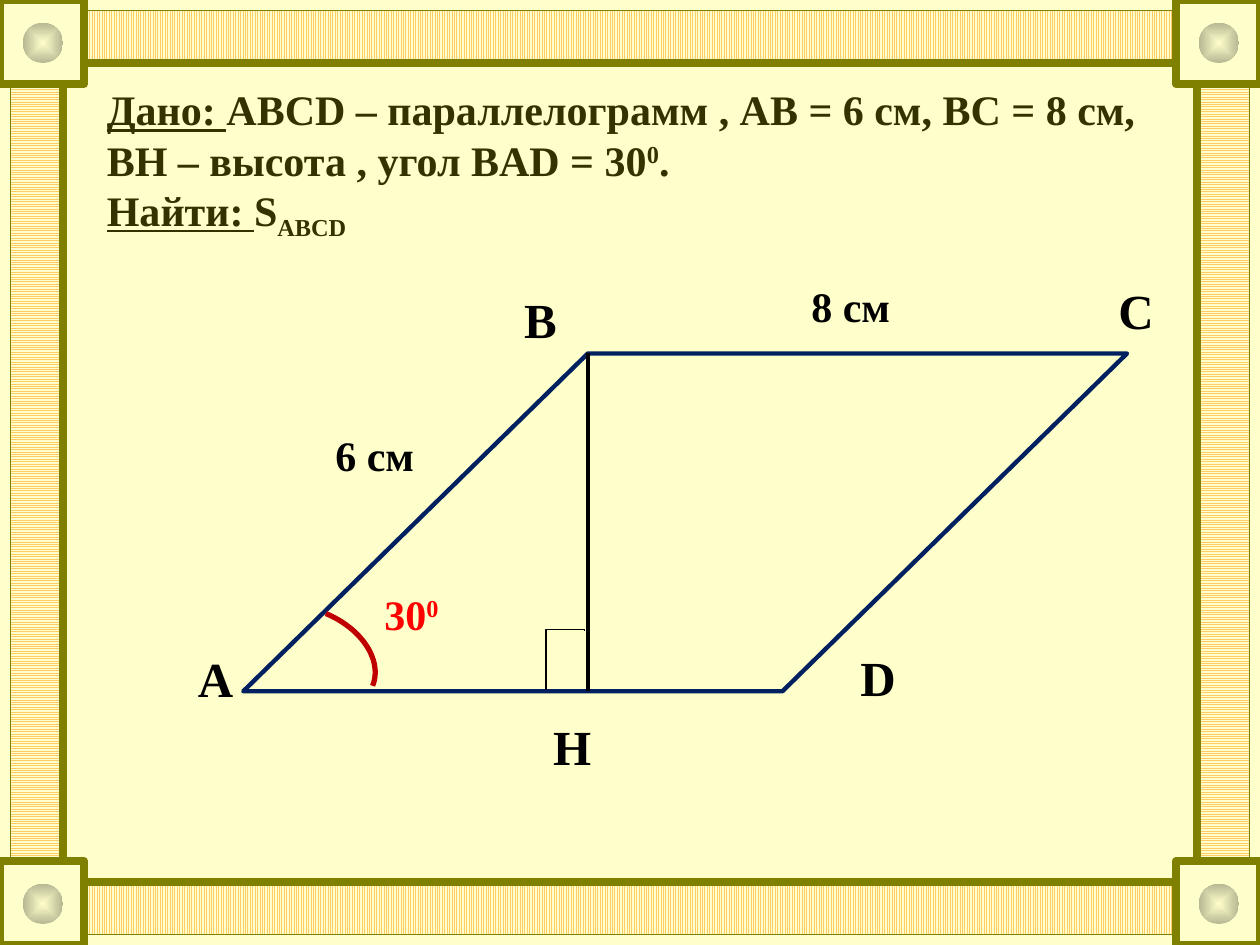
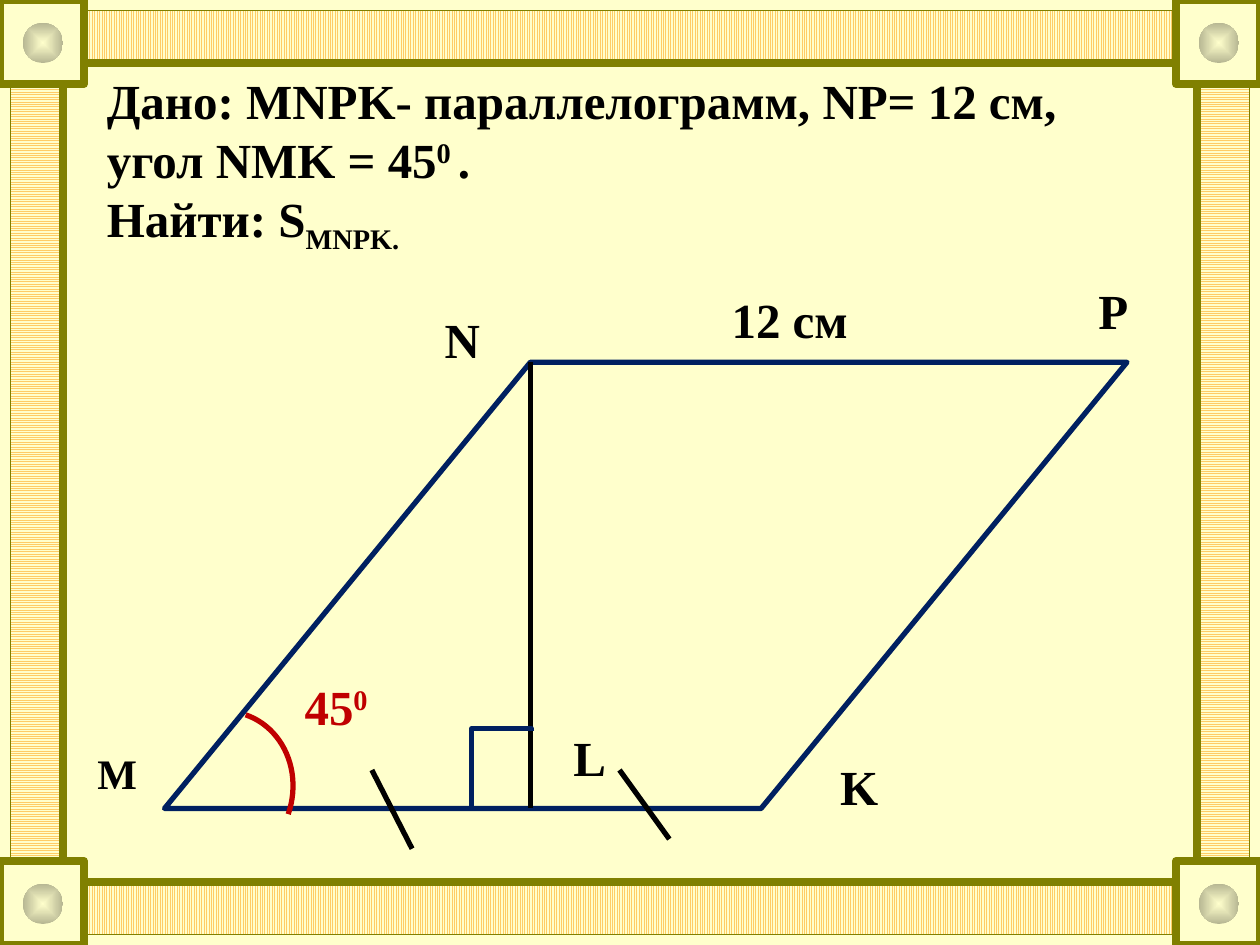
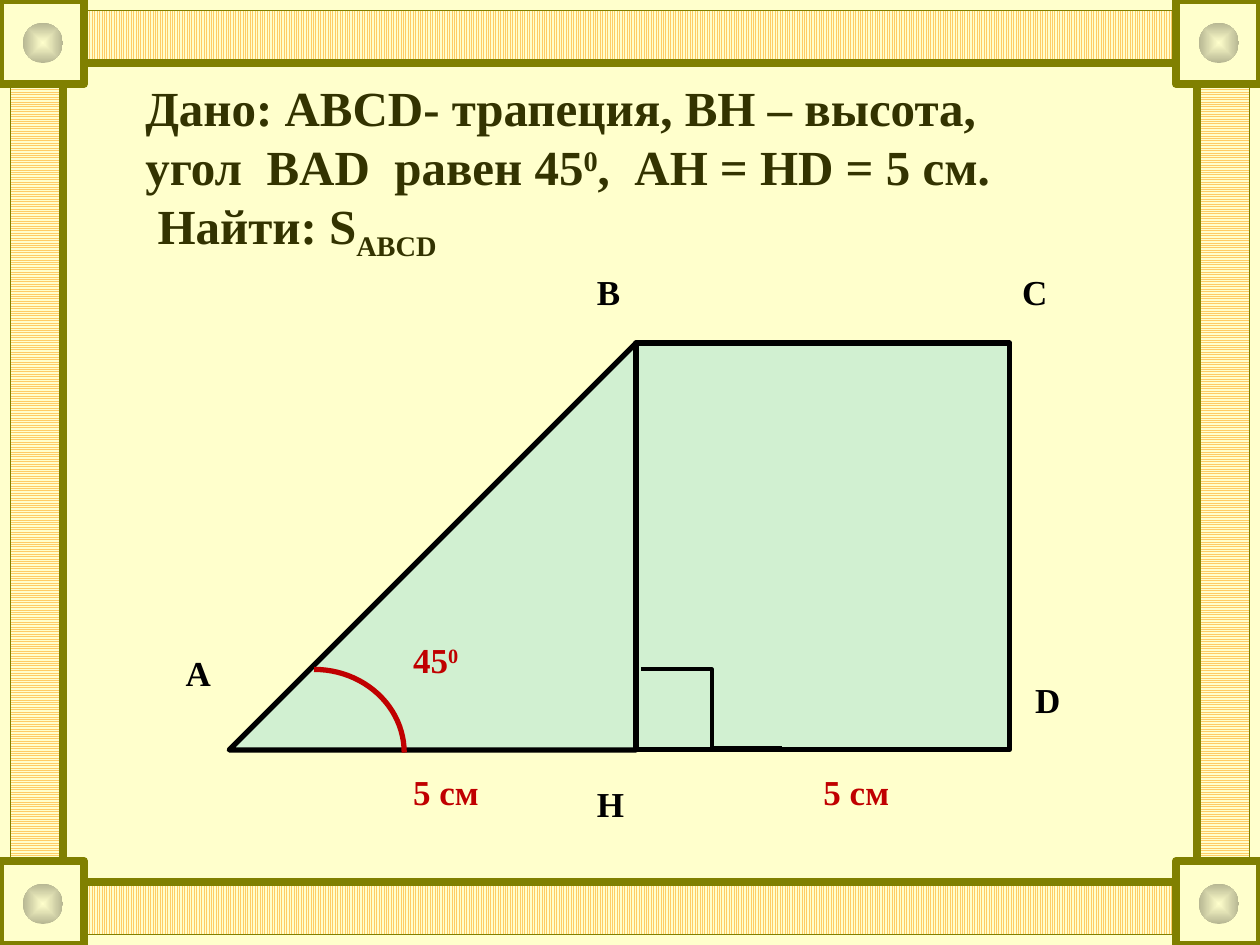
"""Three geometry problems inside one patterned frame."""
import dataclasses
import itertools

import pptx
import pptx.dml.color
import pptx.enum.dml
import pptx.enum.shapes
import pptx.enum.text
import pptx.oxml
import pptx.oxml.ns
import pptx.util
from lxml import etree

Pt = pptx.util.Pt
Kind = pptx.enum.shapes.MSO_SHAPE
Wire = pptx.enum.shapes.MSO_CONNECTOR
Weave = pptx.enum.dml.MSO_PATTERN
qn = pptx.oxml.ns.qn


@dataclasses.dataclass(frozen=True)
class Theme:
    """Colours, font and type sizes of the deck."""
    font: str = "Times New Roman"
    paper: str = "FFFFCC"
    weave: str = "FFCC66"
    olive: str = "808000"
    stud: str = "B6B692"
    brown: str = "333300"
    ink: str = "000000"
    navy: str = "002060"
    red: str = "C00000"
    alert: str = "FF0000"
    mint: str = "D1F0D1"
    large: int = 28
    mid: int = 24
    small: int = 20


T = Theme()
BASE = {"^": "30000", "_": "-25000"}


def rgb(code):
    """Return a colour for a hex code."""
    return pptx.dml.color.RGBColor.from_string(code)


def pen(line, color, width):
    """Set the colour and width of a line."""
    line.color.rgb = rgb(color)
    line.width = Pt(width)


def draw(slide, kind, box, fill=None, line=None, width=1, turn=0):
    """Add a preset shape with a plain fill and line."""
    shape = slide.shapes.add_shape(kind, *map(Pt, box))
    shape.shadow.inherit = False
    shape.rotation = turn
    if fill:
        shape.fill.solid()
        shape.fill.fore_color.rgb = rgb(fill)
    else:
        shape.fill.background()
    if line:
        pen(shape.line, line, width)
    else:
        shape.line.fill.background()
    return shape


def wire(slide, kind, ends, color, width):
    """Add a connector without a shadow."""
    item = slide.shapes.add_connector(kind, *map(Pt, ends))
    pen(item.line, color, width)
    etree.SubElement(item.element.spPr, qn("a:effectLst"))
    return item


def bend(slide, box, color, width, adjust, turn=0):
    """Mark a right angle with an elbow connector."""
    x, y, w, h = box
    item = wire(slide, Wire.ELBOW, (x, y, x + w, y + h), color, width)
    props = item.element.spPr
    props.find(qn("a:xfrm")).set("rot", str(turn * 60000))
    guides = props.find(qn("a:prstGeom")).find(qn("a:avLst"))
    etree.SubElement(guides, qn("a:gd"), name="adj1", fmla=f"val {adjust}")


def write(frame, runs, size, color):
    """Fill a text frame with runs marked u, ^ or _."""
    para = frame.paragraphs[0]
    para.font.name = T.font
    para.font.size = Pt(size)
    para.font.bold = True
    para.font.color.rgb = rgb(color)
    for text, mark in runs:
        for row, part in enumerate(text.split("\n")):
            if row:
                para.add_line_break()
            if part:
                run = para.add_run()
                run.text = part
                if mark == "u":
                    run.font.underline = True
                elif mark:
                    run._r.get_or_add_rPr().set("baseline", BASE[mark])


def head(slide, box, runs, size, color, foot=3.6):
    """Write the problem statement in the given box."""
    frame = slide.shapes.add_textbox(*map(Pt, box)).text_frame
    frame.word_wrap = True
    frame.vertical_anchor = pptx.enum.text.MSO_ANCHOR.MIDDLE
    frame.margin_bottom = Pt(foot)
    write(frame, runs, size, color)


def label(slide, box, notes, tall=None):
    """Write notes at places relative to the box."""
    for text, x, y, w, size, color in notes:
        high = tall or (41 if size == T.large else 36)
        place = (box[0] + x, box[1] + y, w, high)
        frame = slide.shapes.add_textbox(*map(Pt, place)).text_frame
        frame.word_wrap = bool(tall)
        base, *power = text.split("^")
        write(frame, [(base, "")] + [(p, "^") for p in power], size, color)


def shift(box, part):
    """Move a part from box coordinates to the slide."""
    return (box[0] + part[0], box[1] + part[1], *part[2:])


def corner(slide, x, y):
    """Draw a corner block with its shaded stud."""
    draw(slide, Kind.RECTANGLE, (x, y, 48, 48), T.paper, T.olive, 4.5)
    stud = draw(slide, Kind.OVAL, (x + 13, y + 13, 23, 23), T.paper)
    props = stud.element.spPr
    solid = props.find(qn("a:solidFill"))
    shade = pptx.oxml.parse_xml(
        f'<a:gradFill {pptx.oxml.ns.nsdecls("a")} rotWithShape="1"><a:gsLst>'
        f'<a:gs pos="0"><a:srgbClr val="{T.paper}"/></a:gs>'
        f'<a:gs pos="100000"><a:srgbClr val="{T.stud}"/></a:gs></a:gsLst>'
        '<a:path path="shape"><a:fillToRect l="50000" t="50000" '
        'r="50000" b="50000"/></a:path></a:gradFill>')
    props.replace(solid, shade)


def border(slide, w, h):
    """Draw the woven bands, outlines and corner blocks."""
    edge, thick = 36, 30
    rim = edge - thick
    wide, high = w - 2 * edge, h - 2 * edge
    bands = [((edge, y, wide, thick), Weave.NARROW_VERTICAL)
             for y in (rim, h - edge)]
    bands += [((x, edge, thick, high), Weave.NARROW_HORIZONTAL)
              for x in (rim, w - edge)]
    for box, weave in bands:
        band = draw(slide, Kind.RECTANGLE, box)
        band.fill.patterned()
        band.fill.pattern = weave
        band.fill.fore_color.rgb = rgb(T.weave)
        band.fill.back_color.rgb = rgb(T.paper)
    for gap, width in ((edge, 4.5), (rim, 1)):
        box = (gap, gap, w - 2 * gap, h - 2 * gap)
        draw(slide, Kind.RECTANGLE, box, None, T.olive, width)
    for x, y in itertools.product((0, w - 48), (0, h - 48)):
        corner(slide, x, y)


def dress(deck, slide):
    """Give the slide master its background and frame."""
    master = deck.slide_master
    master.background.fill.solid()
    master.background.fill.fore_color.rgb = rgb(T.paper)
    border(slide, 720, 540)
    for shape in list(slide.shapes):
        master.shapes.element.append(shape.element)


def slant(slide, box, lean, side, drop, arc, turn, mark):
    """Draw a parallelogram with its height and angle marks."""
    x, y, w, h = box
    body = draw(slide, Kind.PARALLELOGRAM, box, None, T.navy, side)
    body.adjustments[0] = lean
    foot = x + lean * h
    wire(slide, Wire.STRAIGHT, (foot, y, foot, y + h), T.ink, drop)
    draw(slide, Kind.ARC, shift(box, arc), None, T.red, 3, turn)
    place, color, width, adjust = mark
    bend(slide, shift(box, place), color, width, adjust, 90)


def first(slide, box):
    """Build the parallelogram with a 30 degree angle."""
    head(slide, (54, 48, 612, 90), [
        ("Дано: ", "u"),
        ("ABCD – параллелограмм , АВ = 6 см, ВС = 8 см,\n"
         "BH – высота , угол BAD = 30", ""),
        ("0", "^"), (".\n", ""), ("Найти: ", "u"), ("S", ""), ("ABCD", "_"),
    ], T.mid, T.brown)
    slant(slide, box, 1.02, 2.5, 2.25, (-4, 146.5, 81, 56), 22.4,
          ((167, 164.5, 34, 22), T.ink, 0.75, -2900))
    label(slide, box, [
        ("C", 493, -45, 35, T.large, T.ink),
        ("B", 153.5, -40, 33, T.large, T.ink),
        ("А", -33, 165, 35, T.large, T.ink),
        ("D", 345.5, 164.5, 35, T.large, T.ink),
        ("H", 170, 204, 37, T.large, T.ink),
        ("6 см", 45.5, 40, 60, T.mid, T.ink),
        ("8 см", 317.5, -45, 60, T.mid, T.ink),
        ("30^0", 73.5, 130.5, 47, T.mid, T.alert),
    ])


def second(slide, box):
    """Build the parallelogram with a 45 degree angle."""
    head(slide, (54, 48, 612, 90), [
        ("Дано: MNPK- параллелограмм, NP= 12 см, угол NMK = 45", ""),
        ("0 ", "^"), (".\nНайти: S", ""), ("MNPK.", "_"),
    ], T.large, T.ink)
    slant(slide, box, 0.82, 3, 3, (-10, 199, 83, 91.5), 19,
          ((170, 216, 45, 34), T.navy, 3, -2500))
    x, y = box[:2]
    for left, right, low in ((118.5, 141.5, 278), (260, 288.5, 272.5)):
        ends = (x + left, y + 233, x + right, y + low)
        wire(slide, Wire.STRAIGHT, ends, T.ink, 3)
    label(slide, box, [
        ("M", -45.5, 216.5, 37.5, T.mid, T.ink),
        ("N", 153, -33.5, 35, T.large, T.ink),
        ("P", 526.5, -50, 32, T.large, T.ink),
        ("K", 379, 221.5, 37, T.large, T.ink),
        ("L", 226.5, 205, 33, T.large, T.ink),
        ("12 см", 317, -45, 81, T.large, T.ink),
        ("45^0", 73, 176, 52.5, T.large, T.red),
    ])


def third(slide, box):
    """Build the trapezoid from a triangle and a rectangle."""
    x, y, w, h = box
    draw(slide, Kind.RIGHT_TRIANGLE, (x, y, h, h), T.mint, T.ink, 3, 270)
    draw(slide, Kind.RECTANGLE, (x + h, y, w - h, h), T.mint, T.ink, 3)
    label(slide, box, [
        ("A", -32, 172.5, 42, T.small, T.ink),
        ("D", 453.5, 188, 42, T.small, T.ink),
        ("C", 446, -45, 42, T.small, T.ink),
        ("H", 203, 247.5, 43, T.small, T.ink),
        ("B", 203, -45, 40, T.small, T.ink),
        ("45^0", 98, 165.5, 59, T.small, T.red),
        ("5 см", 98, 240.5, 75, T.small, T.red),
        ("5 см", 332.5, 240.5, 75, T.small, T.red),
    ], 42)
    draw(slide, Kind.ARC, shift(box, (-3, 186.5, 103, 95)), None, T.red, 3)
    bend(slide, shift(box, (235.5, 186.5, 80.5, 45)), T.ink, 2.25, 50000)
    head(slide, (76, 49, 556, 125), [
        ("Дано: ABCD- трапеция, BH – высота, \nугол  BАD  равен 45", ""),
        ("0", "^"), (",  AH = HD = 5 см.\n Найти: S", ""), ("ABCD", "_"),
    ], T.large, T.brown, 32)


def main():
    """Build and save the deck."""
    deck = pptx.Presentation()
    deck.slide_width, deck.slide_height = Pt(720), Pt(540)
    pages = [deck.slides.add_slide(deck.slide_layouts[6]) for _ in range(3)]
    dress(deck, pages[0])
    first(pages[0], (139, 202, 505, 193))
    second(pages[1], (94, 207, 550, 255))
    third(pages[2], (131, 196, 446, 232.5))
    deck.save("out.pptx")


if __name__ == "__main__":
    main()
